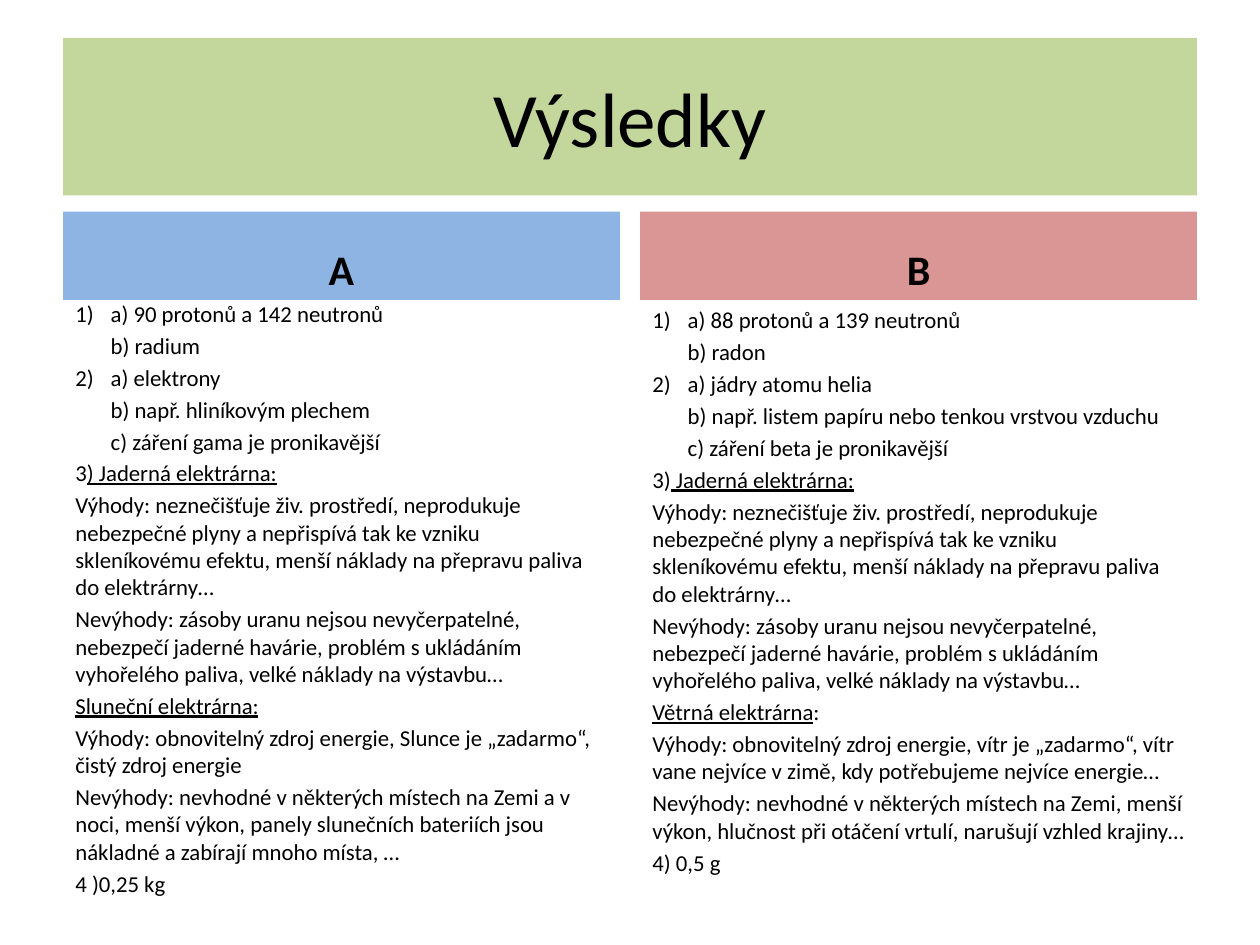
from pptx import Presentation
from pptx import util as u
from pptx.dml.color import RGBColor
from pptx.enum import shapes, text

WIDE, HIGH = 10, 7.5
EDGE, COL, GAP = 0.5, 4.42, 0.16
HEAD_TOP, HEAD_HIGH = 1.68, 0.7
STEP = 0.28  # hanging indent of the answers
FONT = "Calibri"

PROS = ("Výhody: neznečišťuje živ. prostředí, neprodukuje nebezpečné plyny "
        "a nepřispívá tak ke vzniku skleníkovému efektu, menší náklady na "
        "přepravu paliva do elektrárny…")
CONS = ("Nevýhody: zásoby uranu nejsou nevyčerpatelné, nebezpečí jaderné "
        "havárie, problém s ukládáním vyhořelého paliva, velké náklady na "
        "výstavbu…")

# Each line: (kind, (plain, underlined, plain) runs)
GROUPS = [
    ("A", "8EB4E3", 2.33, 4.84, [
        ("item", ["1)\ta) 90 protonů a 142 neutronů"]),
        ("sub", ["b) radium"]),
        ("item", ["2)\ta) elektrony"]),
        ("sub", ["b) např. hliníkovým plechem"]),
        ("sub", ["c) záření gama je pronikavější"]),
        ("flat", ["3", ") Jaderná elektrárna:"]),
        ("flat", [PROS]),
        ("flat", [CONS]),
        ("flat", ["", "Sluneční elektrárna:"]),
        ("flat", ["Výhody: obnovitelný zdroj energie, Slunce je „zadarmo“, "
                  "čistý zdroj energie"]),
        ("flat", ["Nevýhody: nevhodné v některých místech na Zemi a v noci, "
                  "menší výkon, panely slunečních bateriích jsou nákladné "
                  "a zabírají mnoho místa, …"]),
        ("flat", ["4 )0,25 kg"]),
    ]),
    ("B", "D99694", 2.38, 5.12, [
        ("item", ["1)\ta) 88 protonů a 139 neutronů"]),
        ("sub", ["b) radon"]),
        ("item", ["2)\ta) jádry atomu helia"]),
        ("sub", ["b) např. listem papíru nebo tenkou vrstvou vzduchu"]),
        ("sub", ["c) záření beta je pronikavější"]),
        ("flat", ["3)", " Jaderná elektrárna:"]),
        ("flat", [PROS]),
        ("flat", [CONS]),
        ("flat", ["", "Větrná elektrárna", ":"]),
        ("flat", ["Výhody: obnovitelný zdroj energie, vítr je „zadarmo“, "
                  "vítr vane nejvíce v zimě, kdy potřebujeme nejvíce "
                  "energie…"]),
        ("flat", ["Nevýhody: nevhodné v některých místech na Zemi, menší "
                  "výkon, hlučnost při otáčení vrtulí, narušují vzhled "
                  "krajiny…"]),
        ("flat", ["4) 0,5 g"]),
    ]),
]


def paint(fill, tone):
    fill.solid()
    fill.fore_color.rgb = RGBColor.from_string(tone)


def add_run(para, words, size, bold=False, line=False):
    run = para.add_run()
    run.text = words
    font = run.font
    font.name, font.size = FONT, u.Pt(size)
    font.bold, font.underline = bold, line
    paint(font.fill, "000000")


def set_label(shape, words, size, anchor, bold=False):
    """Put one centred line into a shape."""
    frame = shape.text_frame
    frame.vertical_anchor = anchor
    para = frame.paragraphs[0]
    para.alignment = text.PP_ALIGN.CENTER
    add_run(para, words, size, bold)


def add_title(slide, words):
    title = slide.shapes.title
    title.left, title.top = u.Inches(EDGE), u.Inches(0.3)
    title.width, title.height = u.Inches(WIDE - 2 * EDGE), u.Inches(1.25)
    paint(title.fill, "C3D69B")
    set_label(title, words, 44, text.MSO_ANCHOR.MIDDLE)


def add_head(slide, left, words, tone):
    head = slide.shapes.add_shape(
        shapes.MSO_SHAPE.RECTANGLE, u.Inches(left), u.Inches(HEAD_TOP),
        u.Inches(COL), u.Inches(HEAD_HIGH))
    head.shadow.inherit = False
    head.line.fill.background()
    paint(head.fill, tone)
    set_label(head, words, 24, text.MSO_ANCHOR.BOTTOM, bold=True)


def indent(para, kind):
    if kind == "flat":
        return
    props = para._p.get_or_add_pPr()
    props.set("marL", str(u.Inches(STEP)))
    props.set("indent", str(-u.Inches(STEP) if kind == "item" else 0))


def add_list(slide, left, top, high, lines):
    box = slide.shapes.add_textbox(
        u.Inches(left), u.Inches(top), u.Inches(COL), u.Inches(high))
    frame = box.text_frame
    frame.word_wrap = True
    for n, (kind, parts) in enumerate(lines):
        para = frame.add_paragraph() if n else frame.paragraphs[0]
        para.space_before = u.Pt(2.6)
        indent(para, kind)
        for k, words in enumerate(parts):
            if words:
                add_run(para, words, 13, line=k == 1)


def main():
    deck = Presentation()
    deck.slide_width, deck.slide_height = u.Inches(WIDE), u.Inches(HIGH)
    slide = deck.slides.add_slide(deck.slide_layouts[5])
    add_title(slide, "Výsledky")
    for n, (name, tone, top, high, lines) in enumerate(GROUPS):
        left = EDGE + n * (COL + GAP)
        add_head(slide, left, name, tone)
        add_list(slide, left, top, high, lines)
    deck.save("out.pptx")


if __name__ == "__main__":
    main()
